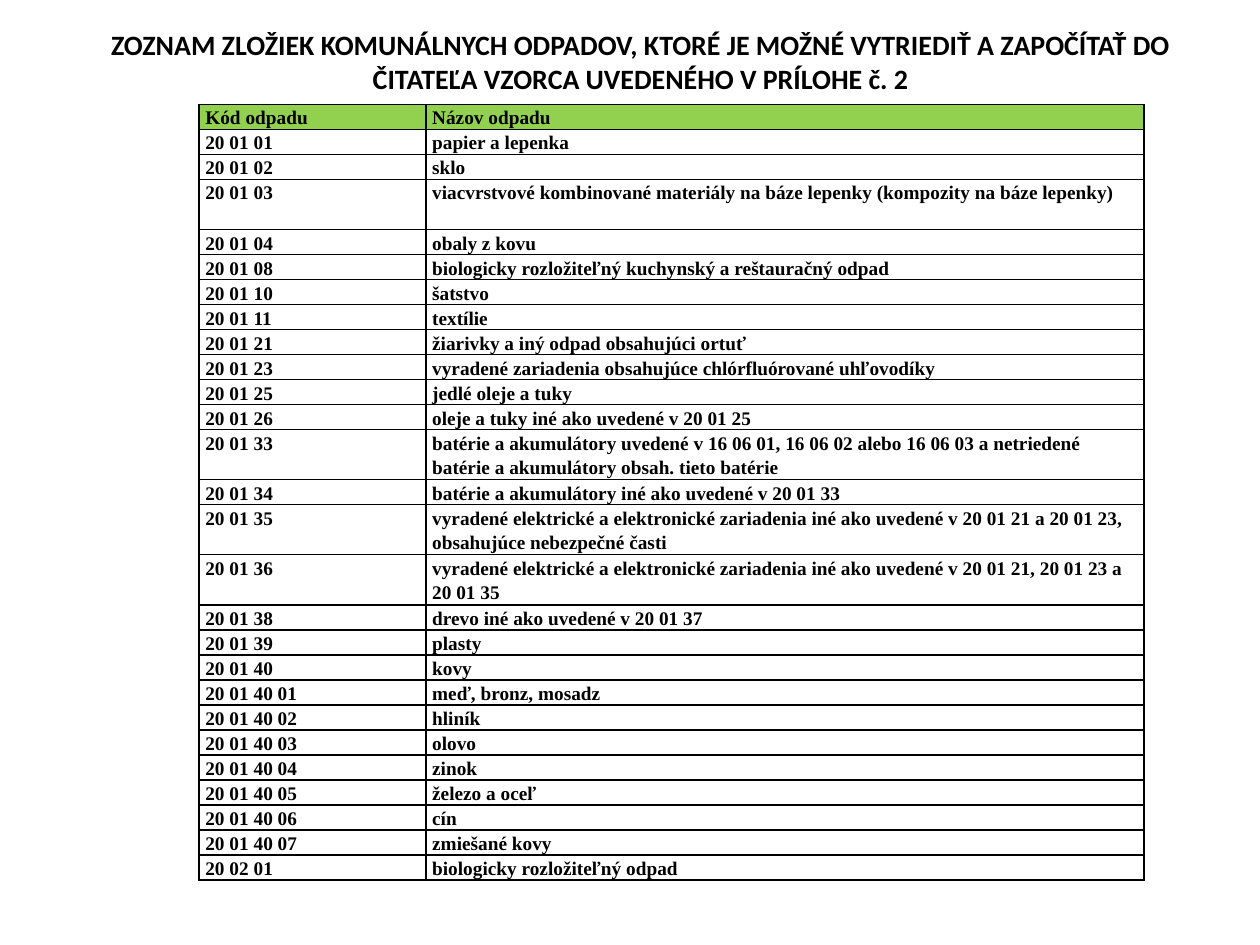
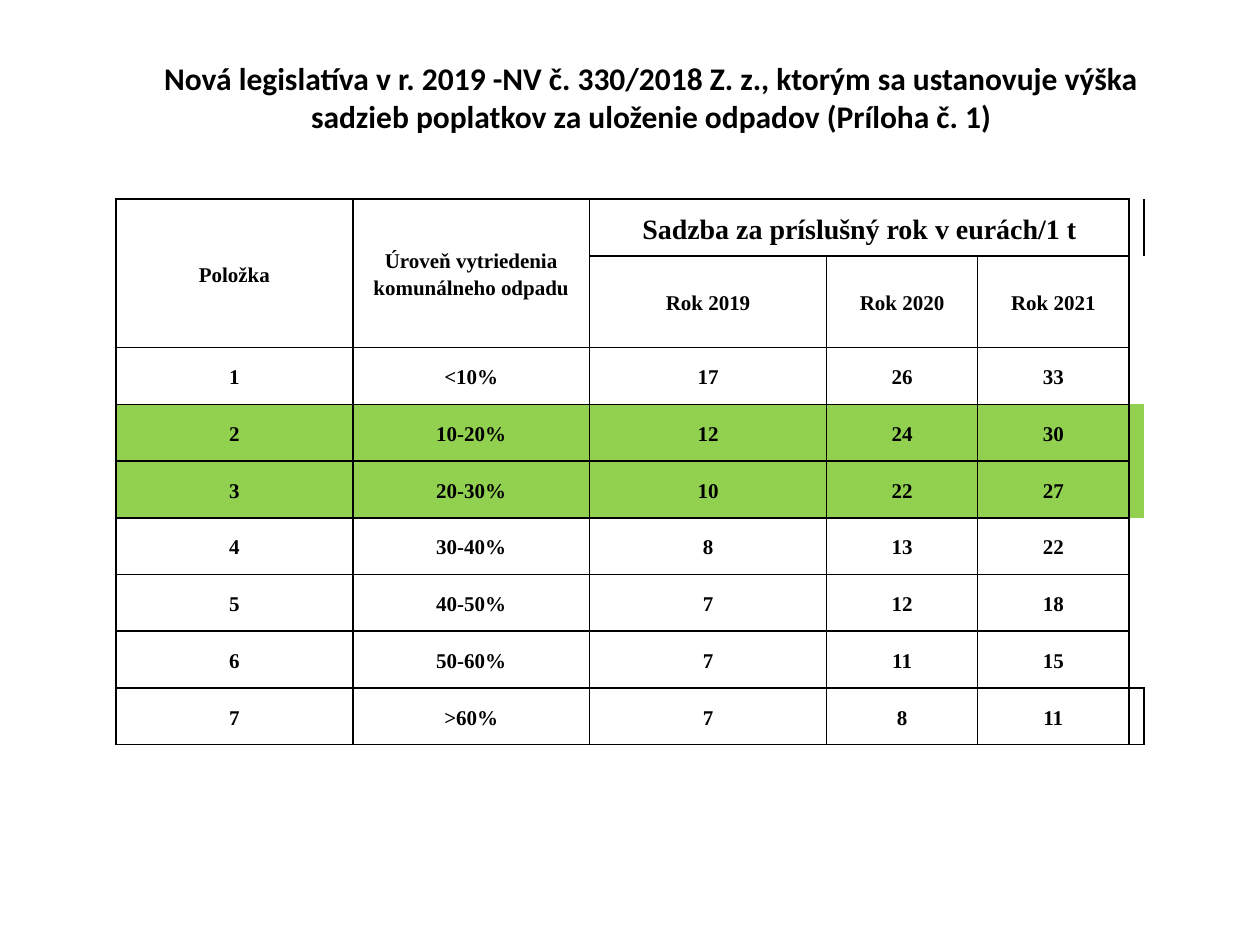
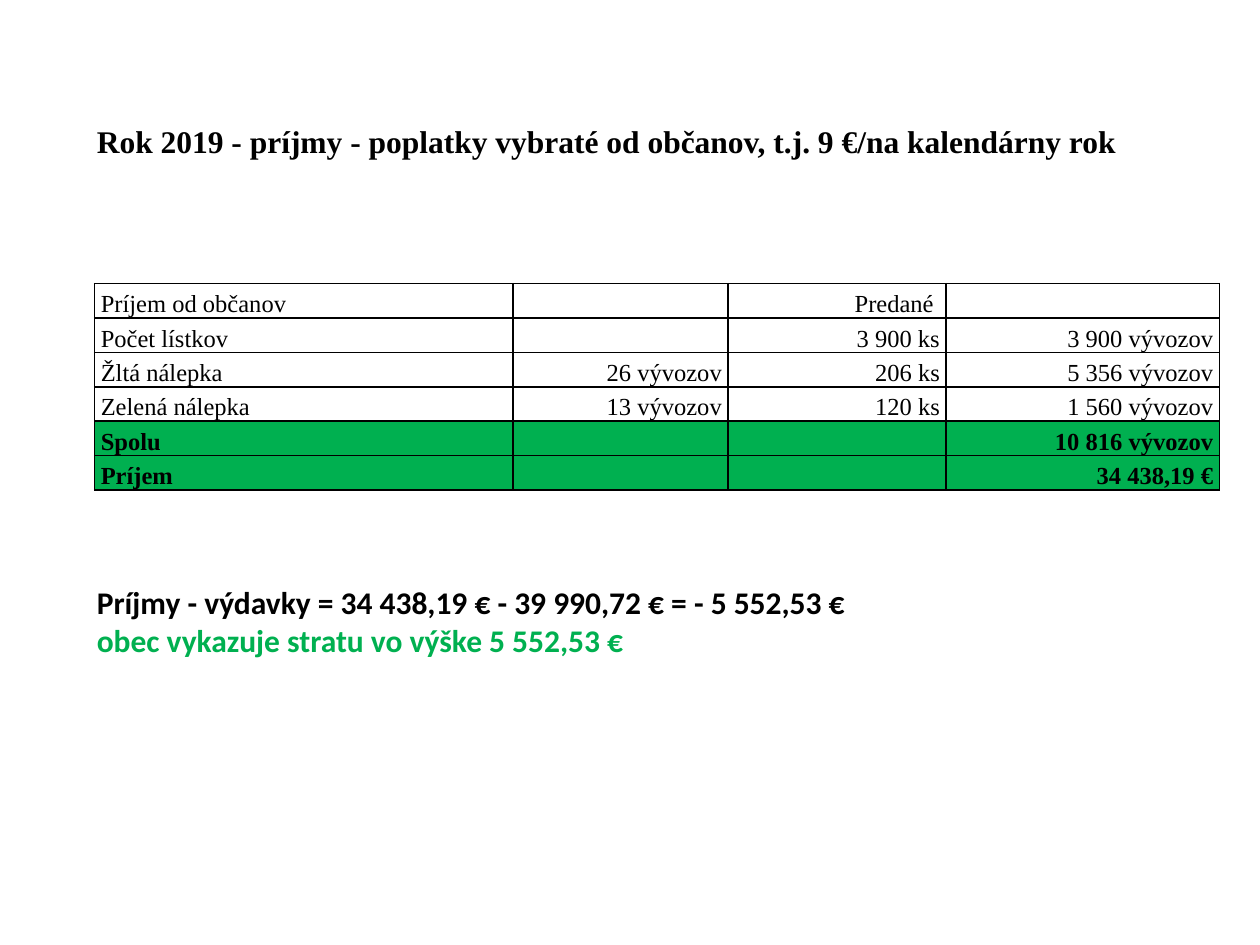
from lxml import etree
from pptx import Presentation
from pptx.dml.color import RGBColor
from pptx.enum.text import MSO_ANCHOR, MSO_AUTO_SIZE, PP_ALIGN
from pptx.oxml.ns import qn
from pptx.util import Inches, Pt

# Shared style
BLACK = RGBColor(0x00, 0x00, 0x00)
LIGHT_GREEN = RGBColor(0x92, 0xD0, 0x50)
GREEN = RGBColor(0x00, 0xB0, 0x50)
LEFT, CENTER, RIGHT = PP_ALIGN.LEFT, PP_ALIGN.CENTER, PP_ALIGN.RIGHT
TOP, MIDDLE, BOTTOM = MSO_ANCHOR.TOP, MSO_ANCHOR.MIDDLE, MSO_ANCHOR.BOTTOM
FIT_SHAPE = MSO_AUTO_SIZE.SHAPE_TO_FIT_TEXT
SANS, SERIF = "Calibri", "Times New Roman"
PLAIN_TABLE = "{2D5ABB26-0587-4C30-8999-92F81FD0307C}"
ALL_SIDES = "LRTB"

# Slide 1: separable waste, code and name
WASTE_ROWS = [
    ("Kód odpadu", "Názov odpadu"),
    ("20 01 01", "papier a lepenka"),
    ("20 01 02", "sklo"),
    ("20 01 03", "viacvrstvové kombinované materiály na báze lepenky (kompozity na báze lepenky)"),
    ("20 01 04", "obaly z kovu"),
    ("20 01 08", "biologicky rozložiteľný kuchynský a reštauračný odpad"),
    ("20 01 10", "šatstvo"),
    ("20 01 11", "textílie"),
    ("20 01 21", "žiarivky a iný odpad obsahujúci ortuť"),
    ("20 01 23", "vyradené zariadenia obsahujúce chlórfluórované uhľovodíky"),
    ("20 01 25", "jedlé oleje a tuky"),
    ("20 01 26", "oleje a tuky iné ako uvedené v 20 01 25"),
    ("20 01 33", "batérie a akumulátory uvedené v 16 06 01, 16 06 02 alebo 16 06 03 "
                 "a netriedené batérie a akumulátory obsah. tieto batérie"),
    ("20 01 34", "batérie a akumulátory iné ako uvedené v 20 01 33"),
    ("20 01 35", "vyradené elektrické a elektronické zariadenia iné ako uvedené "
                 "v 20 01 21 a 20 01 23, obsahujúce nebezpečné časti"),
    ("20 01 36", "vyradené elektrické a elektronické zariadenia iné ako uvedené "
                 "v 20 01 21, 20 01 23 a 20 01 35"),
    ("20 01 38", "drevo iné ako uvedené v 20 01 37"),
    ("20 01 39", "plasty"),
    ("20 01 40", "kovy"),
    ("20 01 40 01", "meď, bronz, mosadz"),
    ("20 01 40 02", "hliník"),
    ("20 01 40 03", "olovo"),
    ("20 01 40 04", "zinok"),
    ("20 01 40 05", "železo a oceľ"),
    ("20 01 40 06", "cín"),
    ("20 01 40 07", "zmiešané kovy"),
    ("20 02 01", "biologicky rozložiteľný odpad"),
]
LONG_NAME = 70  # names beyond this length take a row of double height

# Slide 2: landfill rates by separation level, with a narrow closing column
RATE_ROWS = [
    ("Položka", "Úroveň vytriedenia komunálneho odpadu",
     "Sadzba za príslušný rok v eurách/1 t", "", "", ""),
    ("", "", "Rok 2019", "Rok 2020", "Rok 2021", ""),
    ("1", "<10%", "17", "26", "33", ""),
    ("2", "10-20%", "12", "24", "30", ""),
    ("3", "20-30%", "10", "22", "27", ""),
    ("4", "30-40%", "8", "13", "22", ""),
    ("5", "40-50%", "7", "12", "18", ""),
    ("6", "50-60%", "7", "11", "15", ""),
    ("7", ">60%", "7", "8", "11", ""),
]

# Slide 3: income from residents
INCOME_ROWS = [
    ("Príjem od občanov", "", "Predané ", ""),
    ("Počet lístkov", "", "3 900 ks", "3 900 vývozov"),
    ("Žltá nálepka", "26 vývozov", "206 ks", "5 356 vývozov"),
    ("Zelená nálepka", "13 vývozov", "120 ks", "1 560 vývozov"),
    ("Spolu", "", "", "10 816 vývozov"),
    ("Príjem", "", "", "34 438,19 €"),
]


def apply(target, values):
    for name, value in values.items():
        setattr(target, name, value)


class Deck:
    def __init__(self):
        self.prs = Presentation()
        self.prs.slide_width, self.prs.slide_height = Inches(10), Inches(7.5)
        self.slide = None

    def new_slide(self):
        self.slide = self.prs.slides.add_slide(self.prs.slide_layouts[6])

    def fill_paragraph(self, paragraph, text, font, color=BLACK, layout=None):
        apply(paragraph, layout or {})
        if text:
            run = paragraph.add_run()
            run.text = text
            apply(run.font, font)
            run.font.color.rgb = color
        else:  # keep empty cells as low as their row
            end = etree.SubElement(paragraph._p, qn("a:endParaRPr"))
            end.set("sz", str(int(font["size"].pt * 100)))

    def text(self, left, top, width, height, lines, size=18, face=SANS, align=LEFT):
        """Bold text box; lines are (text, colour) pairs."""
        box = self.slide.shapes.add_textbox(*map(Inches, (left, top, width, height)))
        frame = box.text_frame
        apply(frame, {"word_wrap": True, "auto_size": FIT_SHAPE})
        font = {"size": Pt(size), "name": face, "bold": True}
        for index, (line, color) in enumerate(lines):
            paragraph = frame.add_paragraph() if index else frame.paragraphs[0]
            self.fill_paragraph(paragraph, line, font, color, {"alignment": align})

    def borders(self, cell, sides):
        properties = cell._tc.get_or_add_tcPr()
        for index, side in enumerate(sides):
            line = etree.Element(qn("a:ln" + side), w=str(Pt(1)))
            fill = etree.SubElement(line, qn("a:solidFill"))
            etree.SubElement(fill, qn("a:srgbClr"), val=str(BLACK))
            properties.insert(index, line)

    def table(self, left, top, widths, heights, rows, size, aligns, cell_format,
              bold=True, fills=None, space_after=0, edges=None):
        """Bordered table; fills maps a highlighted row to its colour."""
        fills = fills or {}
        table = self.slide.shapes.add_table(
            len(rows), len(widths), Inches(left), Inches(top),
            Inches(sum(widths)), Inches(sum(heights))).table
        apply(table, {"first_row": False, "horz_banding": False})
        table._tbl.tblPr.find(qn("a:tableStyleId")).text = PLAIN_TABLE
        for column, width in zip(table.columns, widths):
            column.width = Inches(width)
        for r, (row, height) in enumerate(zip(rows, heights)):
            table.rows[r].height = Inches(height)
            font = {"size": Pt(size), "name": SERIF, "bold": bold or r in fills}
            for c, (text, align) in enumerate(zip(row, aligns)):
                cell = table.cell(r, c)
                apply(cell, cell_format)
                layout = {"alignment": align, "line_spacing": 1.15,
                          "space_after": Pt(space_after)}
                self.fill_paragraph(cell.text_frame.paragraphs[0], text, font,
                                    layout=layout)
                if r in fills:
                    cell.fill.solid()
                    cell.fill.fore_color.rgb = fills[r]
                else:
                    cell.fill.background()
                self.borders(cell, edges(r, c) if edges else ALL_SIDES)
        return table


def cell_style(anchor, side, end):
    return {"vertical_anchor": anchor,
            "margin_left": Inches(side), "margin_right": Inches(side),
            "margin_top": Inches(end), "margin_bottom": Inches(end)}


def waste_slide(deck):
    deck.new_slide()
    units = [2 if len(name) > LONG_NAME else 1 for _, name in WASTE_ROWS]
    line_height = 6.16 / sum(units)
    deck.table(1.58, 0.83, [1.8, 5.7], [line_height * n for n in units], WASTE_ROWS,
               11, [LEFT, LEFT], cell_style(TOP, 0.05, 0), fills={0: LIGHT_GREEN})
    deck.text(0.67, 0.17, 8.83, 0.64, [(
        "ZOZNAM ZLOŽIEK KOMUNÁLNYCH ODPADOV, KTORÉ JE MOŽNÉ VYTRIEDIŤ A ZAPOČÍTAŤ DO "
        "ČITATEĽA VZORCA UVEDENÉHO V PRÍLOHE č. 2", BLACK)], size=16, align=CENTER)


def rate_edges(row, column):
    """The narrow closing column is framed only in the last row."""
    last_row = len(RATE_ROWS) - 1
    if column < 5 or row == last_row:
        return ALL_SIDES
    return "LB" if row == last_row - 1 else "L"


def rates_slide(deck):
    deck.new_slide()
    deck.text(0.92, 0.42, 8.5, 0.71, [(
        "Nová legislatíva v r. 2019 -NV č. 330/2018 Z. z., ktorým sa ustanovuje výška "
        "sadzieb poplatkov za uloženie odpadov (Príloha č. 1)", BLACK)], align=CENTER)
    rates = deck.table(0.92, 1.58, [1.88] * 3 + [1.2] * 2 + [0.03],
                       [0.45, 0.73] + [0.45] * 7, RATE_ROWS, 12, [CENTER] * 6,
                       cell_style(MIDDLE, 0.04, 0.03),
                       fills={3: LIGHT_GREEN, 4: LIGHT_GREEN},
                       space_after=6.2, edges=rate_edges)
    # Merged headings
    for column, (end_row, end_column) in enumerate([(1, 0), (1, 1), (0, 4)]):
        heading = rates.cell(0, column)
        heading.merge(rates.cell(end_row, end_column))
        apply(heading.text_frame.paragraphs[0],
              {"space_before": Pt(6), "space_after": Pt(0)})
    rates.cell(0, 2).text_frame.paragraphs[0].runs[0].font.size = Pt(16)


def income_slide(deck):
    deck.new_slide()
    deck.table(0.75, 2.25, [3.32, 1.71, 1.73, 2.17], [1.64 / 6] * 6, INCOME_ROWS,
               14, [LEFT] + [RIGHT] * 3, cell_style(BOTTOM, 0.05, 0),
               bold=False, fills={4: GREEN, 5: GREEN})
    deck.text(0.67, 0.92, 8.92, 0.4, [(
        "Rok 2019 - príjmy - poplatky vybraté od občanov, t.j. 9 €/na kalendárny rok",
        BLACK)], face=SERIF)
    deck.text(0.67, 4.58, 9.08, 0.71, [
        ("Príjmy - výdavky = 34 438,19 € - 39 990,72 € = - 5 552,53 €", BLACK),
        ("obec vykazuje stratu vo výške 5 552,53 €", GREEN)])


def main():
    deck = Deck()
    waste_slide(deck)
    rates_slide(deck)
    income_slide(deck)
    deck.prs.save("out.pptx")


if __name__ == "__main__":
    main()
